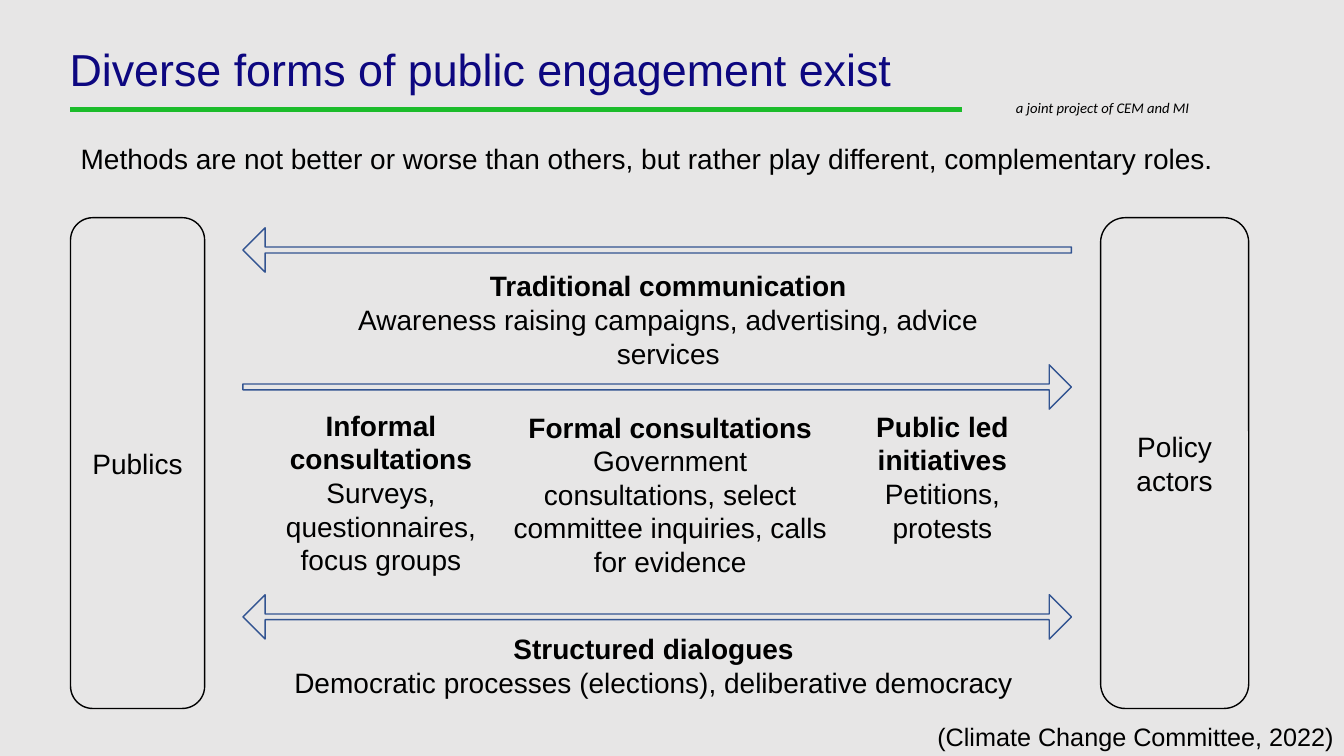
from pptx import Presentation
from pptx.dml.color import RGBColor
from pptx.enum.shapes import MSO_SHAPE
from pptx.enum.text import MSO_ANCHOR, PP_ALIGN
from pptx.util import Pt

COLORS = {"background": "E7E6E6", "title": "0D0780", "rule": "1CBC2B",
          "arrow": "325491", "text": "000000"}

# Content: boxes are left, top, width, height in points
TITLE = "Diverse forms of public engagement exist"
TAGLINE = "a joint project of CEM and MI"
MESSAGE = ("Methods are not better or worse than others, "
           "but rather play different, complementary roles.")
CITATION = "(Climate Change Committee, 2022)"

ACTORS = [("Publics", 50.4, 95.8), ("Policy actors", 786.2, 105.8)]
ARROWS = [  # shape, top, shaft thickness, rotation
    (MSO_SHAPE.RIGHT_ARROW, 162.7, 0.133, 180),
    (MSO_SHAPE.RIGHT_ARROW, 260.6, 0.133, 0),
    (MSO_SHAPE.LEFT_RIGHT_ARROW, 424.8, 0.128, 0),
]
METHODS = [
    ("Traditional communication",
     "Awareness raising campaigns, advertising, advice services",
     (209.5, 188.6, 535.7, 55.4)),
    ("Informal consultations", "Surveys, questionnaires, focus groups",
     (178.6, 288, 187.2, 128.2)),
    ("Formal consultations",
     "Government consultations, select committee inquiries, calls for evidence",
     (352.8, 289.4, 252, 128.2)),
    ("Public led initiatives", "Petitions, protests",
     (601.2, 288.7, 144, 104.4)),
    ("Structured dialogues",
     "Democratic processes (elections), deliberative democracy",
     (202.3, 447.8, 529.2, 55.4)),
]
ACTOR_TOP, ACTOR_HEIGHT = 155.5, 350.6
ARROW_LEFT, ARROW_WIDTH, ARROW_HEIGHT = 173.5, 591.8, 31.7


def rgb(name):
    return RGBColor.from_string(COLORS[name])


def style_text(paragraph, size, color="text", font="Arial", bold=False,
               italic=False, align=PP_ALIGN.LEFT):
    paragraph.alignment = align
    for run in paragraph.runs:
        run.font.name = font
        run.font.size = Pt(size)
        run.font.bold = bold
        run.font.italic = italic
        run.font.color.rgb = rgb(color)


def add_text(slide, box, text, size, inset=None, anchor=MSO_ANCHOR.TOP, **style):
    frame = slide.shapes.add_textbox(*map(Pt, box)).text_frame
    frame.word_wrap = True
    frame.vertical_anchor = anchor
    if inset is not None:
        frame.margin_left = Pt(inset)
        frame.margin_top = frame.margin_right = frame.margin_bottom = 0
    frame.text = text
    for paragraph in frame.paragraphs:
        style_text(paragraph, size, **style)
    return frame


def add_outline(slide, kind, box, line, fill=None):
    shape = slide.shapes.add_shape(kind, *map(Pt, box))
    shape.shadow.inherit = False
    if fill:
        shape.fill.solid()
        shape.fill.fore_color.rgb = rgb(fill)
    else:
        shape.fill.background()
    shape.line.color.rgb = rgb(line)
    shape.line.width = Pt(1)
    return shape


def main():
    presentation = Presentation()
    presentation.slide_width, presentation.slide_height = Pt(960), Pt(540)
    slide = presentation.slides.add_slide(presentation.slide_layouts[6])
    slide.background.fill.solid()
    slide.background.fill.fore_color.rgb = rgb("background")

    # Heading with green rule and tagline
    rule = add_outline(slide, MSO_SHAPE.RECTANGLE, (50.4, 77, 636.5, 2.9),
                       "rule", "rule")
    rule.line.width = Pt(0.01)
    add_text(slide, (718.6, 67, 175, 20.2), TAGLINE, 10.5,
             font="Calibri", italic=True)
    title = add_text(slide, (49.7, 33.8, 637.9, 34.6), TITLE, 32, inset=0,
                     color="title")
    title.paragraphs[0].line_spacing = 0.9

    # Key message
    message = add_text(slide, (49.7, 98.6, 842.4, 90), MESSAGE, 20, inset=7.9)
    message.paragraphs[0].line_spacing = 1.1
    message.paragraphs[0].space_before = Pt(3)
    message.paragraphs[0].space_after = Pt(3)

    # Actors on either side
    for name, left, width in ACTORS:
        actor = add_outline(slide, MSO_SHAPE.ROUNDED_RECTANGLE,
                            (left, ACTOR_TOP, width, ACTOR_HEIGHT), "text")
        actor.text_frame.word_wrap = True
        actor.text_frame.vertical_anchor = MSO_ANCHOR.MIDDLE
        actor.text_frame.text = name
        style_text(actor.text_frame.paragraphs[0], 20, align=PP_ALIGN.CENTER)

    # Directions of engagement
    for kind, top, thickness, rotation in ARROWS:
        arrow = add_outline(slide, kind,
                            (ARROW_LEFT, top, ARROW_WIDTH, ARROW_HEIGHT),
                            "arrow", "background")
        arrow.adjustments[0] = thickness
        arrow.adjustments[1] = 0.5
        arrow.rotation = rotation

    # Methods: bold heading above its examples
    for heading, examples, box in METHODS:
        frame = add_text(slide, box, f"{heading}\n{examples}", 20,
                         align=PP_ALIGN.CENTER)
        frame.paragraphs[0].runs[0].font.bold = True

    # Citation
    add_text(slide, (433.4, 511.9, 526.3, 28.8), CITATION, 18,
             anchor=MSO_ANCHOR.MIDDLE, align=PP_ALIGN.RIGHT)

    presentation.save("out.pptx")


if __name__ == "__main__":
    main()
